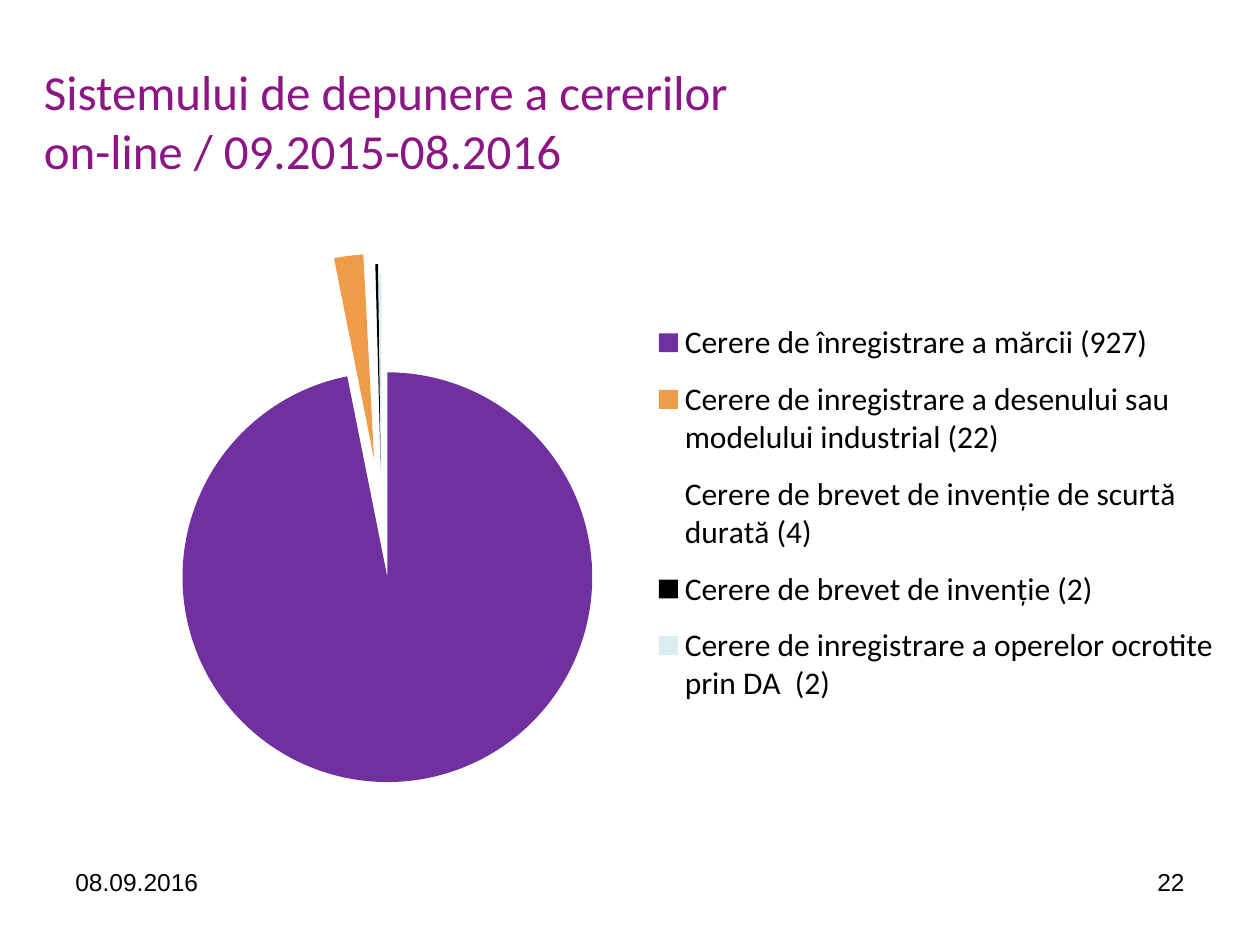
from lxml import etree
from pptx import Presentation
from pptx import util as u
from pptx.chart.data import CategoryChartData
from pptx.dml.color import RGBColor
from pptx.enum import chart as ch, text
from pptx.oxml.ns import qn


def rgb(value):
    return RGBColor.from_string(value)


def set_explosion(before, percent):
    e = etree.Element(qn("c:explosion"))
    e.set("val", str(percent))
    before.addprevious(e)


def set_layout(parent, index, **values):
    for old in parent.findall(qn("c:layout")):
        parent.remove(old)
    layout = etree.Element(qn("c:layout"))
    parent.insert(index, layout)
    manual = etree.SubElement(layout, qn("c:manualLayout"))
    for tag, value in values.items():
        etree.SubElement(manual, qn(f"c:{tag}")).set("val", str(value))


class SlideBuilder:
    black = "000000"

    def __init__(self, prs):
        self.s = prs.slides.add_slide(prs.slide_layouts[6])

    def font(self, font, color, **values):
        for name, value in values.items():
            setattr(font, name, value)
        font.color.rgb = rgb(color)

    def text(self, box, content, size, name="Arial", color=black,
             align=text.PP_ALIGN.LEFT, anchor=text.MSO_ANCHOR.TOP):
        sp = self.s.shapes.add_textbox(*map(u.Inches, box))
        tf = sp.text_frame
        for key, value in {"word_wrap": True, "vertical_anchor": anchor}.items():
            setattr(tf, key, value)
        p = tf.paragraphs[0]
        p.text = content
        p.alignment = align
        for r in p.runs:
            self.font(r.font, color, name=name, size=u.Pt(size))

    def pie(self, box, slices, explosion):
        data = CategoryChartData()
        data.categories = [f"{label} ({count})" for label, count, _, _ in slices]
        data.add_series("Series 1", [count for _, count, _, _ in slices])
        chart = self.s.shapes.add_chart(
            ch.XL_CHART_TYPE.PIE, *map(u.Inches, box), data).chart
        for key, value in {"has_title": False, "has_legend": True}.items():
            setattr(chart, key, value)
        self.font(chart.font, self.black, name="Arial", size=u.Pt(18))
        legend = chart.legend
        for key, value in {"position": ch.XL_LEGEND_POSITION.RIGHT,
                           "include_in_layout": False}.items():
            setattr(legend, key, value)
        self.font(legend.font, self.black, name="Calibri", size=u.Pt(18))
        plot = chart.plots[0]
        plot.vary_by_categories = True
        series = plot.series[0]
        for i, (_, _, color, offset) in enumerate(slices):
            fill = series.points[i].format.fill
            fill.solid()
            fill.fore_color.rgb = rgb(color)
            dpt = series._element.findall(qn("c:dPt"))[i]
            set_explosion(dpt.find(qn("c:spPr")), offset)
        set_explosion(series._element.find(qn("c:dPt")), explosion)
        edges = {"xMode": "edge", "yMode": "edge"}
        set_layout(chart._chartSpace.chart.plotArea, 0, layoutTarget="inner",
                   **edges, x=0.07, y=0.11, w=0.5, h=0.75)
        set_layout(legend._element, 1, **edges, x=0.53, y=0.17, w=0.46, h=0.61)


def main():
    prs = Presentation()
    prs.slide_width, prs.slide_height = u.Inches(10), u.Inches(7.5)
    b = SlideBuilder(prs)
    b.text((0.5, 6.83, 2.33, 0.52), "08.09.2016", 14)
    b.text((7.17, 6.83, 2.33, 0.52), "22", 14, align=text.PP_ALIGN.RIGHT)
    b.text((0.25, 0.33, 8.17, 1.25),
           "Sistemului de depunere a cererilor \von-line / 09.2015-08.2016",
           28, "Calibri", "8C1686", anchor=text.MSO_ANCHOR.MIDDLE)
    slices = [
        ("Cerere de înregistrare a mărcii", 927, "7030A0", 28),
        ("Cerere de inregistrare a desenului sau modelului industrial", 22, "EF9C49", 30),
        ("Cerere de brevet de invenție de scurtă durată", 4, "FFFFFF", 25),
        ("Cerere de brevet de invenție", 2, "000000", 25),
        ("Cerere de inregistrare a operelor ocrotite prin DA ", 2, "DAEDEF", 20),
    ]
    b.pie((-0.17, 1.5, 10, 5.42), slices, 25)
    prs.save("out.pptx")


if __name__ == "__main__":
    main()
